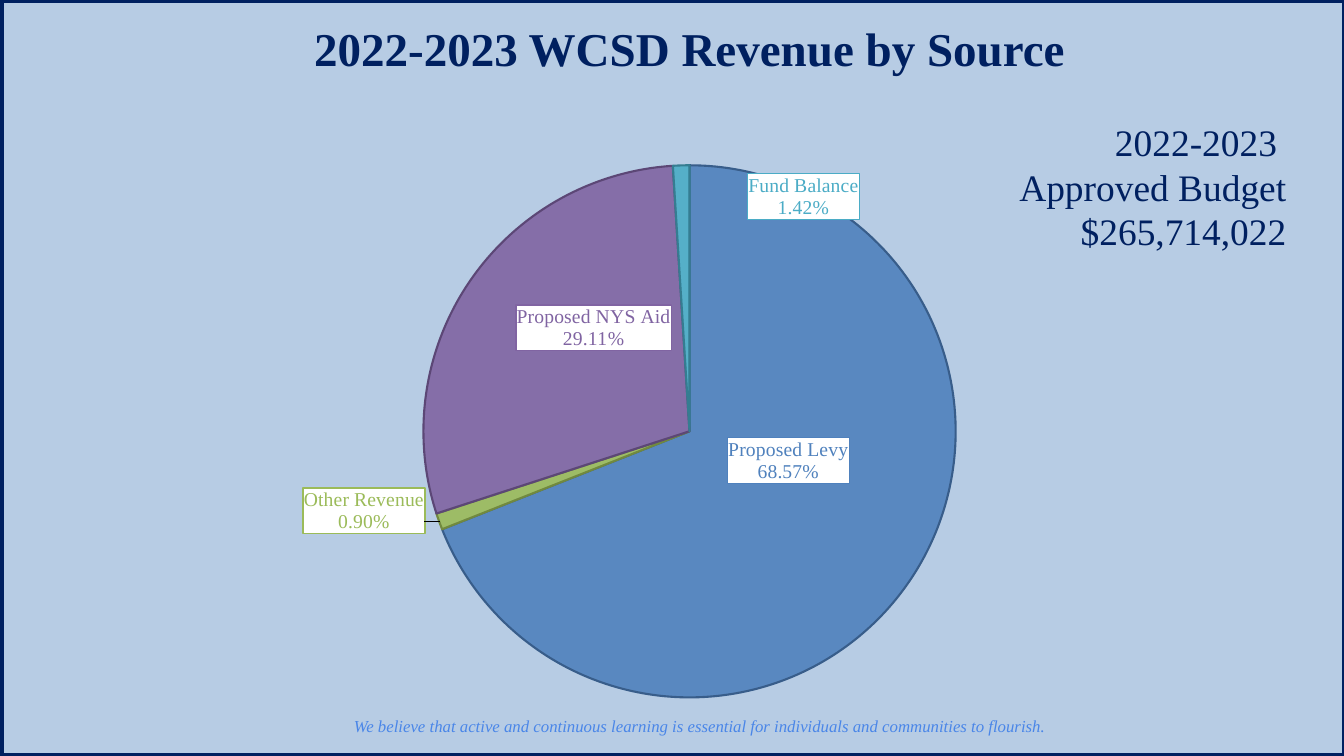
from dataclasses import dataclass
from math import cos, pi, sin

from lxml.etree import SubElement
from pptx import Presentation
from pptx.chart.data import CategoryChartData
from pptx.chart.series import PieSeries
from pptx.dml.color import RGBColor
from pptx.enum.chart import XL_CHART_TYPE, XL_LABEL_POSITION
from pptx.enum.shapes import MSO_SHAPE
from pptx.enum.text import MSO_ANCHOR, PP_ALIGN
from pptx.oxml import parse_xml
from pptx.oxml.ns import nsdecls, qn
from pptx.slide import Slide
from pptx.text.text import TextFrame
from pptx.util import Inches, Pt

COLORS = {
    "sky": "B7CCE4", "navy": "002060", "motto": "4A86E8", "white": "FFFFFF",
    "levy": "4F81BD", "levy edge": "385D8A",
    "gap": "C0504D", "gap edge": "8C3836",
    "other": "9BBB59", "other edge": "71893F",
    "aid": "8064A2", "aid edge": "5C4776",
    "fund": "4BACC6", "fund edge": "357D91",
}
SERIF = "Times New Roman"
LEFT, TOP, WIDTH, HEIGHT = 0.74, 1.05, 11.88, 6.01
MID_X, MID_Y, RADIUS = 6.84, 4.28, 2.64


@dataclass
class Slice:
    name: str
    share: int | None
    color: str
    percent: str = ""
    label: tuple[float, float] = (0, 0)  # label centre on the slide, inches


@dataclass
class Style:
    size: float
    color: str
    align: PP_ALIGN
    bold: bool = False
    italic: bool = False


SLICES = [
    Slice("Proposed Levy", 69, "levy", "68.57%", (7.82, 4.57)),
    Slice("", None, "gap"),
    Slice("Other Revenue", 1, "other", "0.90%", (3.61, 5.07)),
    Slice("Proposed NYS Aid", 29, "aid", "29.11%", (5.89, 3.25)),
    Slice("Fund Balance", 1, "fund", "1.42%", (7.97, 1.95)),
]


def rgb(name: str) -> RGBColor:
    return RGBColor.from_string(COLORS[name])


def write(frame: TextFrame, lines: list[str], style: Style) -> None:
    frame.word_wrap = True
    for index, line in enumerate(lines):
        para = frame.add_paragraph() if index else frame.paragraphs[0]
        para.alignment = style.align
        run = para.add_run()
        run.text = line
        run.font.name = SERIF
        run.font.size = Pt(style.size)
        run.font.color.rgb = rgb(style.color)
        run.font.bold = style.bold
        run.font.italic = style.italic


def trim(frame: TextFrame) -> None:
    frame.margin_left = frame.margin_right = Inches(0.07)
    frame.margin_top = frame.margin_bottom = Inches(0.04)


def add_label(series: PieSeries, index: int, part: Slice, turn: float) -> None:
    """Label a slice; turn is its middle as a fraction of the circle."""
    label = series.points[index].data_label
    write(label.text_frame, [part.name, part.percent],
          Style(14, part.color, PP_ALIGN.CENTER))
    label.text_frame.word_wrap = False
    label.position = XL_LABEL_POSITION.CENTER
    x, y = part.label
    home_x = MID_X + RADIUS / 2 * sin(2 * pi * turn)
    home_y = MID_Y - RADIUS / 2 * cos(2 * pi * turn)
    node = series._element.find(qn("c:dLbls")).findall(qn("c:dLbl"))[-1]
    node.find(qn("c:idx")).addnext(parse_xml(
        f'<c:layout {nsdecls("c")}><c:manualLayout>'
        f'<c:x val="{(x - home_x) / WIDTH:.4f}"/>'
        f'<c:y val="{(y - home_y) / HEIGHT:.4f}"/>'
        '</c:manualLayout></c:layout>'))
    node.find(qn("c:tx")).addnext(parse_xml(
        f'<c:spPr {nsdecls("c", "a")}>'
        f'<a:solidFill><a:srgbClr val="{COLORS["white"]}"/></a:solidFill>'
        f'<a:ln w="{Pt(1)}"><a:solidFill>'
        f'<a:srgbClr val="{COLORS[part.color]}"/></a:solidFill></a:ln></c:spPr>'))
    for tag, value in (("Val", "0"), ("CatName", "1"), ("Percent", "1")):
        node.find(qn(f"c:show{tag}")).set("val", value)


def add_pie(slide: Slide) -> None:
    data = CategoryChartData()
    data.categories = [part.name for part in SLICES]
    data.add_series("Series 1", [part.share for part in SLICES])
    chart = slide.shapes.add_chart(
        XL_CHART_TYPE.PIE, Inches(LEFT), Inches(TOP), Inches(WIDTH),
        Inches(HEIGHT), data).chart
    chart.has_legend = chart.has_title = False
    chart.font.name = "Arial"
    chart.font.size = Pt(10)
    plot = chart.plots[0]
    plot.vary_by_categories = True
    series = plot.series[0]
    total = sum(part.share or 0 for part in SLICES)
    start = 0
    for index, part in enumerate(SLICES):
        look = series.points[index].format
        look.fill.solid()
        look.fill.fore_color.rgb = rgb(part.color)
        tint = look.fill._xPr.find(qn("a:solidFill"))[0]
        SubElement(tint, qn("a:alpha")).set("val", "90000")
        look.line.color.rgb = rgb(f"{part.color} edge")
        look.line.width = Pt(1.5)
        if part.share:
            add_label(series, index, part, (start + part.share / 2) / total)
            start += part.share
    area = chart._chartSpace.find(".//" + qn("c:plotArea"))
    for old in area.findall(qn("c:layout")):
        area.remove(old)
    area.insert(0, parse_xml(
        f'<c:layout {nsdecls("c")}><c:manualLayout>'
        '<c:layoutTarget val="inner"/><c:xMode val="edge"/><c:yMode val="edge"/>'
        f'<c:x val="{(MID_X - RADIUS - LEFT) / WIDTH:.4f}"/>'
        f'<c:y val="{(MID_Y - RADIUS - TOP) / HEIGHT:.4f}"/>'
        f'<c:w val="{2 * RADIUS / WIDTH:.4f}"/>'
        f'<c:h val="{2 * RADIUS / HEIGHT:.4f}"/>'
        '</c:manualLayout></c:layout>'))


def add_title(slide: Slide) -> None:
    title = slide.shapes.title
    title.left, title.top = Inches(2.24), Inches(0.17)
    title.width, title.height = Inches(9.2), Inches(0.6)
    trim(title.text_frame)
    title.text_frame.vertical_anchor = MSO_ANCHOR.MIDDLE
    write(title.text_frame, ["2022-2023 WCSD Revenue by Source"],
          Style(33.6, "navy", PP_ALIGN.CENTER, bold=True))


def add_frame(slide: Slide) -> None:
    frame = slide.shapes.add_shape(
        MSO_SHAPE.RECTANGLE, Inches(0.01), 0, Inches(13.33), Inches(7.5))
    frame.shadow.inherit = False
    frame.fill.background()
    frame.line.color.rgb = rgb("navy")
    frame.line.width = Pt(4.5)


def main() -> None:
    deck = Presentation()
    deck.slide_width, deck.slide_height = Inches(13.33), Inches(7.5)
    slide = deck.slides.add_slide(deck.slide_layouts[5])
    slide.background.fill.solid()
    slide.background.fill.fore_color.rgb = rgb("sky")
    add_pie(slide)
    budget = slide.shapes.add_textbox(
        Inches(9.47), Inches(1.13), Inches(3.39), Inches(1.45))
    write(budget.text_frame,
          ["2022-2023 ", "Approved Budget", "$265,714,022"],
          Style(26.7, "navy", PP_ALIGN.RIGHT))
    add_title(slide)
    add_frame(slide)
    motto = slide.shapes.add_textbox(
        Inches(3.44), Inches(7.06), Inches(7.05), Inches(0.26))
    trim(motto.text_frame)
    write(motto.text_frame,
          ["We believe that active and continuous learning is essential "
           "for individuals and communities to flourish."],
          Style(12, "motto", PP_ALIGN.LEFT, italic=True))
    deck.save("out.pptx")


if __name__ == "__main__":
    main()
